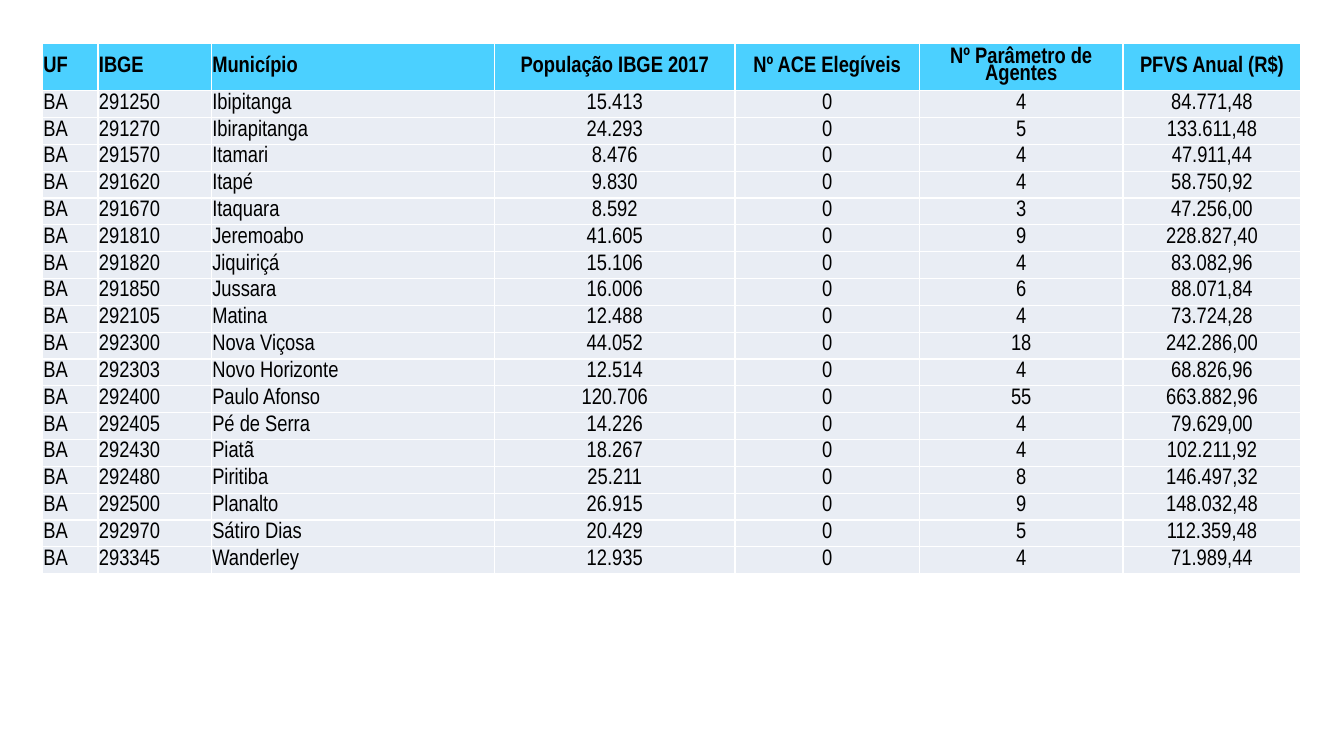
from lxml import etree
from pptx import Presentation
from pptx.dml.color import RGBColor
from pptx.enum.text import MSO_ANCHOR, PP_ALIGN
from pptx.oxml.ns import qn
from pptx.util import Pt

LEFT, CENTER = PP_ALIGN.LEFT, PP_ALIGN.CENTER
MIDDLE = MSO_ANCHOR.MIDDLE
HEADER_BLUE = RGBColor(0x4B, 0xD0, 0xFF)
ROW_GRAY = RGBColor(0xE9, 0xED, 0xF4)
BLACK = RGBColor(0, 0, 0)
WHITE = RGBColor(0xFF, 0xFF, 0xFF)

HEADERS = ["UF", "IBGE", "Município", "População IBGE 2017", "Nº ACE Elegíveis",
           "Nº Parâmetro de Agentes", "PFVS Anual (R$)"]
WIDTHS = [39.6, 81, 202.3, 171.7, 131.8, 145.5, 127]
HEADER_HEIGHT, ROW_HEIGHT = 33.8, 19.17
CITIES = [
    ("291250", "Ibipitanga", "15.413", "4", "84.771,48"),
    ("291270", "Ibirapitanga", "24.293", "5", "133.611,48"),
    ("291570", "Itamari", "8.476", "4", "47.911,44"),
    ("291620", "Itapé", "9.830", "4", "58.750,92"),
    ("291670", "Itaquara", "8.592", "3", "47.256,00"),
    ("291810", "Jeremoabo", "41.605", "9", "228.827,40"),
    ("291820", "Jiquiriçá", "15.106", "4", "83.082,96"),
    ("291850", "Jussara", "16.006", "6", "88.071,84"),
    ("292105", "Matina", "12.488", "4", "73.724,28"),
    ("292300", "Nova Viçosa", "44.052", "18", "242.286,00"),
    ("292303", "Novo Horizonte", "12.514", "4", "68.826,96"),
    ("292400", "Paulo Afonso", "120.706", "55", "663.882,96"),
    ("292405", "Pé de Serra", "14.226", "4", "79.629,00"),
    ("292430", "Piatã", "18.267", "4", "102.211,92"),
    ("292480", "Piritiba", "25.211", "8", "146.497,32"),
    ("292500", "Planalto", "26.915", "9", "148.032,48"),
    ("292970", "Sátiro Dias", "20.429", "5", "112.359,48"),
    ("293345", "Wanderley", "12.935", "4", "71.989,44"),
]


def write_cell(cell, text, bold=False, align=LEFT, fill=ROW_GRAY):
    cell.margin_left = cell.margin_right = Pt(0.7)
    cell.margin_top = cell.margin_bottom = Pt(2.1)
    cell.vertical_anchor = MIDDLE
    p = cell.text_frame.paragraphs[0]
    p.alignment = align
    p.line_spacing = 0.8
    r = p.add_run()
    r.text = text
    r.font.name = "Arial Narrow"
    r.font.size = Pt(16)
    r.font.bold = bold
    r.font.color.rgb = BLACK
    tcPr = cell._tc.get_or_add_tcPr()
    for side in ("a:lnL", "a:lnR", "a:lnT", "a:lnB"):
        ln = etree.SubElement(tcPr, qn(side), w=str(Pt(1)))
        solid = etree.SubElement(ln, qn("a:solidFill"))
        etree.SubElement(solid, qn("a:srgbClr"), val=str(WHITE))
    cell.fill.solid()
    cell.fill.fore_color.rgb = fill


prs = Presentation()
prs.slide_width, prs.slide_height = Pt(960), Pt(540)
s = prs.slides.add_slide(prs.slide_layouts[6])

rows = [HEADERS]
for code, city, population, agents, amount in CITIES:
    rows.append(["BA", code, city, population, "0", agents, amount])

height = HEADER_HEIGHT + ROW_HEIGHT * len(CITIES)
table = s.shapes.add_table(len(rows), len(HEADERS), Pt(30.4), Pt(31),
                           Pt(sum(WIDTHS)), Pt(height)).table
table.horz_banding = False
for column, width in zip(table.columns, WIDTHS):
    column.width = Pt(width)

for i, row in enumerate(rows):
    header = i == 0
    table.rows[i].height = Pt(HEADER_HEIGHT if header else ROW_HEIGHT)
    for j, text in enumerate(row):
        write_cell(table.cell(i, j), text, bold=header,
                   align=LEFT if j < 3 else CENTER,
                   fill=HEADER_BLUE if header else ROW_GRAY)

prs.save("out.pptx")
